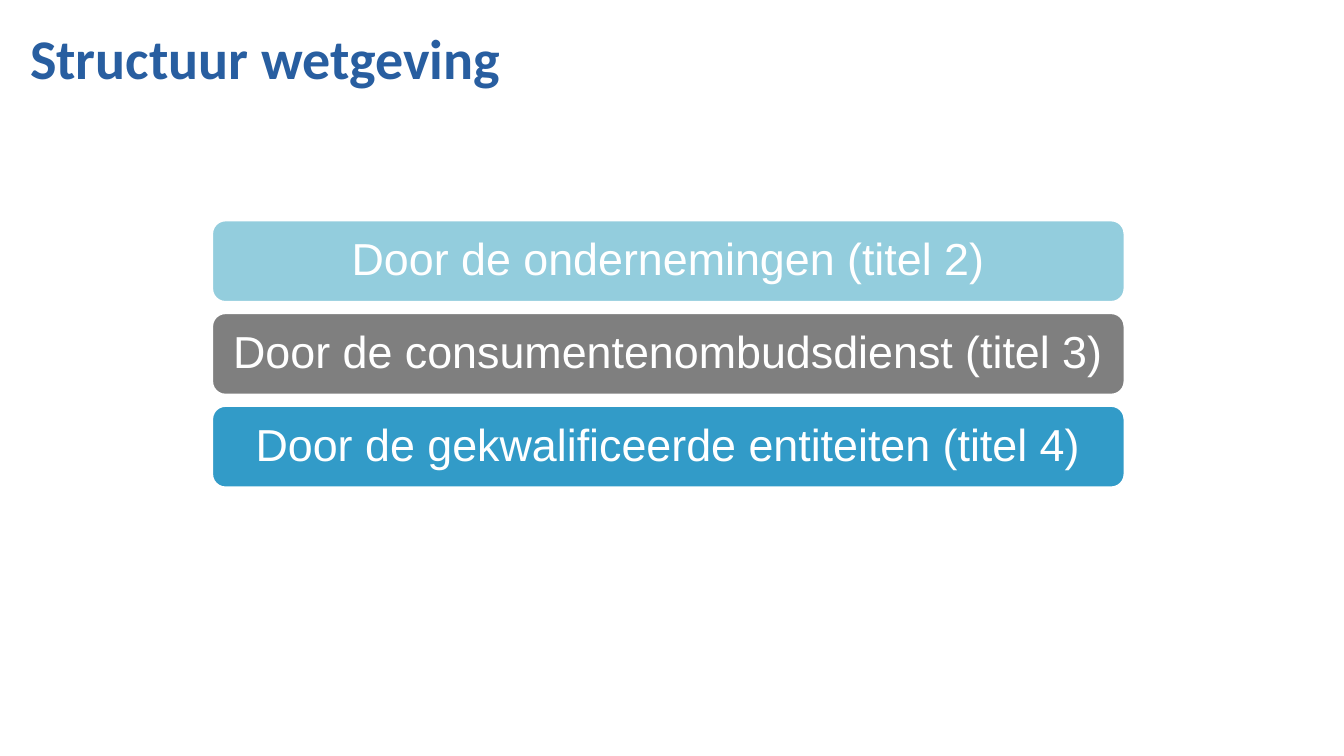
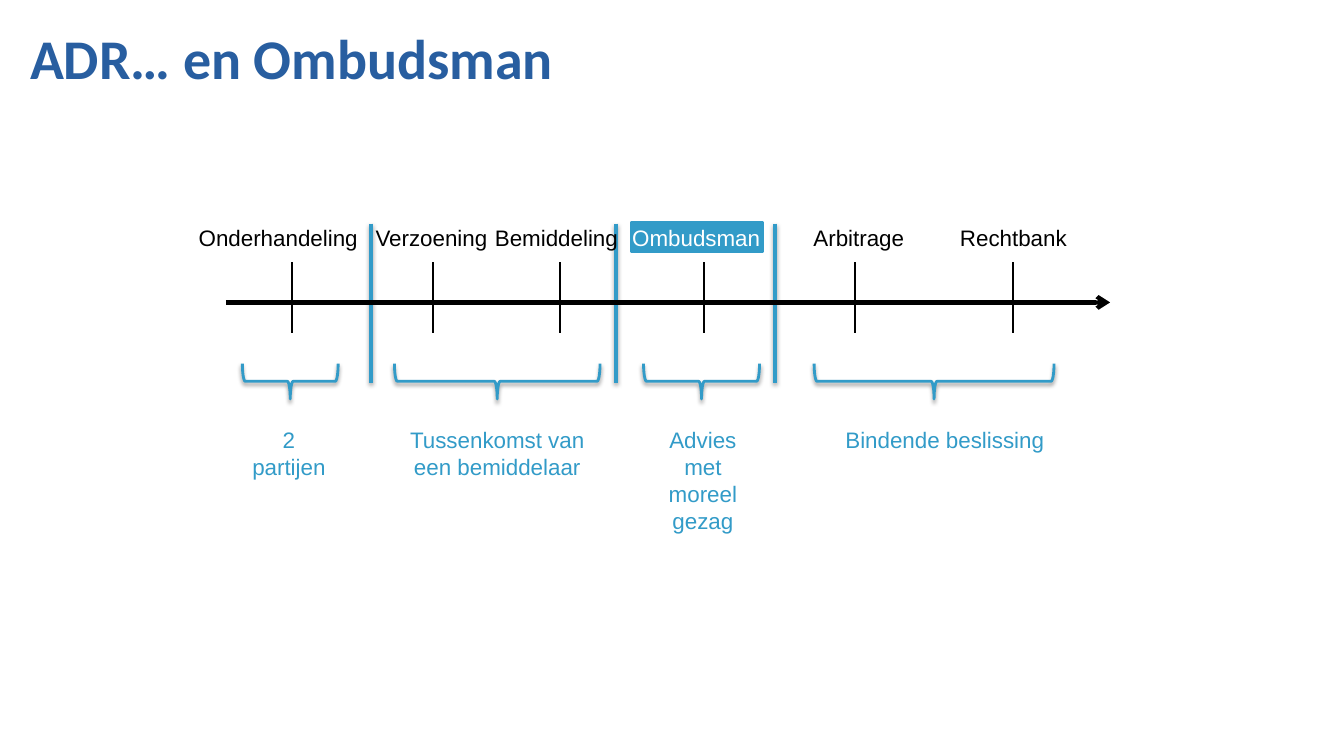
from lxml import etree
from pptx import Presentation
from pptx.dml.color import RGBColor
from pptx.enum.shapes import MSO_CONNECTOR, MSO_SHAPE
from pptx.enum.text import MSO_ANCHOR, PP_ALIGN
from pptx.oxml.ns import qn
from pptx.util import Inches, Pt

STRAIGHT = MSO_CONNECTOR.STRAIGHT
RECTANGLE, ROUNDED, BRACE = MSO_SHAPE.RECTANGLE, MSO_SHAPE.ROUNDED_RECTANGLE, MSO_SHAPE.LEFT_BRACE
TOP, MIDDLE = MSO_ANCHOR.TOP, MSO_ANCHOR.MIDDLE
LEFT, CENTER = PP_ALIGN.LEFT, PP_ALIGN.CENTER

NAVY, BLUE, PALE, GREY = "285EA0", "329BC8", "93CDDD", "7F7F7F"
BLACK, WHITE = "000000", "FFFFFF"


def color(value):
    return RGBColor.from_string(value)


class Deck:
    """Holds the shared style and the current slide; lengths are percentages of the slide size."""

    def __init__(self):
        self.presentation = Presentation()
        self.presentation.slide_width = Inches(13.33)
        self.presentation.slide_height = Inches(7.5)
        self.slide = None

    def x(self, columns):
        return round(self.presentation.slide_width * columns / 100)

    def y(self, rows):
        return round(self.presentation.slide_height * rows / 100)

    def box(self, left, top, width, height):
        return self.x(left), self.y(top), self.x(width), self.y(height)

    def new_slide(self, title):
        self.slide = self.presentation.slides.add_slide(self.presentation.slide_layouts[6])
        self.text(title, (1.5, 1.73, 96.5, 11.6), 40, NAVY, "Calibri", True, LEFT, MIDDLE)

    def set_text(self, shape, text, size, ink, font="Arial", bold=False, align=CENTER, anchor=TOP):
        frame = shape.text_frame
        frame.text = text
        frame.word_wrap = True
        frame.vertical_anchor = anchor
        paragraph = frame.paragraphs[0]
        paragraph.alignment = align
        run_font = paragraph.runs[0].font
        run_font.name, run_font.size, run_font.bold = font, Pt(size), bold
        run_font.color.rgb = color(ink)
        return paragraph

    def text(self, text, area, size, ink, *style):
        textbox = self.slide.shapes.add_textbox(*self.box(*area))
        self.set_text(textbox, text, size, ink, *style)

    def shape(self, kind, area, fill, outline):
        shape = self.slide.shapes.add_shape(kind, *self.box(*area))
        shape.shadow.inherit = False
        shape.fill.solid()
        shape.fill.fore_color.rgb = color(fill)
        shape.line.color.rgb = color(outline)
        shape.line.width = Pt(2)
        return shape

    def bar(self, text, area, fill):
        shape = self.shape(ROUNDED, area, fill, WHITE)
        paragraph = self.set_text(shape, text, 32, WHITE, anchor=MIDDLE)
        paragraph.line_spacing = 0.9

    def drop_shadow(self, effects, opacity):
        shadow = etree.SubElement(effects, qn("a:outerShdw"), blurRad=str(Pt(3.1)),
                                  dist=str(Pt(1.8)), dir="5400000", rotWithShape="0")
        ink = etree.SubElement(shadow, qn("a:srgbClr"), val=BLACK)
        etree.SubElement(ink, qn("a:alpha"), val=str(opacity * 1000))

    def line(self, start, end, ink, width, arrow=False, shadow=False):
        connector = self.slide.shapes.add_connector(
            STRAIGHT, self.x(start[0]), self.y(start[1]), self.x(end[0]), self.y(end[1]))
        connector.line.color.rgb = color(ink)
        connector.line.width = Pt(width)
        properties = connector.element.spPr
        if arrow:
            etree.SubElement(properties.find(qn("a:ln")), qn("a:tailEnd"), type="arrow")
        effects = etree.SubElement(properties, qn("a:effectLst"))
        if shadow:
            self.drop_shadow(effects, 35)

    def brace(self, center, top, span, depth):
        width, height = self.y(depth), self.x(span)
        left = self.x(center) - width // 2
        middle = self.y(top + depth / 2)
        shape = self.slide.shapes.add_shape(BRACE, left, middle - height // 2, width, height)
        shape.rotation = 270
        shape.fill.background()
        shape.line.color.rgb = color(BLUE)
        shape.line.width = Pt(2)
        shape.shadow.inherit = False
        self.drop_shadow(shape.element.spPr.find(qn("a:effectLst")), 38)

    def label(self, text, center, top, width, height, ink):
        self.text(text, (center - width / 2, top, width, height), 16, ink)


def legislation_slide(deck):
    deck.new_slide("Structuur wetgeving")
    bars = [
        ("Door de ondernemingen (titel 2)", PALE),
        ("Door de consumentenombudsdienst (titel 3)", GREY),
        ("Door de gekwalificeerde entiteiten (titel 4)", BLUE),
    ]
    for index, (text, fill) in enumerate(bars):
        deck.bar(text, (15.75, 29.1 + 12.27 * index, 67.95, 10.9), fill)


def ombudsman_slide(deck):
    deck.new_slide("ADR… en Ombudsman")
    for column in (27.6, 45.83, 57.68):
        deck.line((column, 29.6), (column, 50.67), BLUE, 3, shadow=True)
    deck.shape(RECTANGLE, (46.95, 29.45, 9.83, 3.87), BLUE, BLUE)

    phases = [
        ("2 partijen", 21.6, 7.13),
        ("Tussenkomst van een bemiddelaar", 37, 15.3),
        ("Advies met moreel gezag", 52.2, 8.63),
        ("Bindende beslissing", 69.5, 17.85),
    ]
    for text, center, span in phases:
        deck.brace(center, 48.1, span, 4.67)
    note_shifts = (-0.1, 0, 0.1, 0.8)
    for (text, center, span), shift in zip(phases, note_shifts):
        deck.label(text, center + shift, 55.73, span, 8.5, BLUE)

    deck.line((16.8, 40), (82.6, 40), BLACK, 3, arrow=True)
    steps = [
        ("Onderhandeling", 21.7, 20.7, BLACK),
        ("Verzoening", 32.25, 32.1, BLACK),
        ("Bemiddeling", 41.7, 41.4, BLACK),
        ("Ombudsman", 52.35, 51.8, WHITE),
        ("Arbitrage", 63.6, 63.9, BLACK),
        ("Rechtbank", 75.4, 75.4, BLACK),
    ]
    for text, tick, center, ink in steps:
        deck.label(text, center, 28.93, 13.5, 4.93, ink)
        deck.line((tick, 34.7), (tick, 44), BLACK, 1.5)


def main():
    deck = Deck()
    legislation_slide(deck)
    ombudsman_slide(deck)
    deck.presentation.save("out.pptx")


if __name__ == "__main__":
    main()
